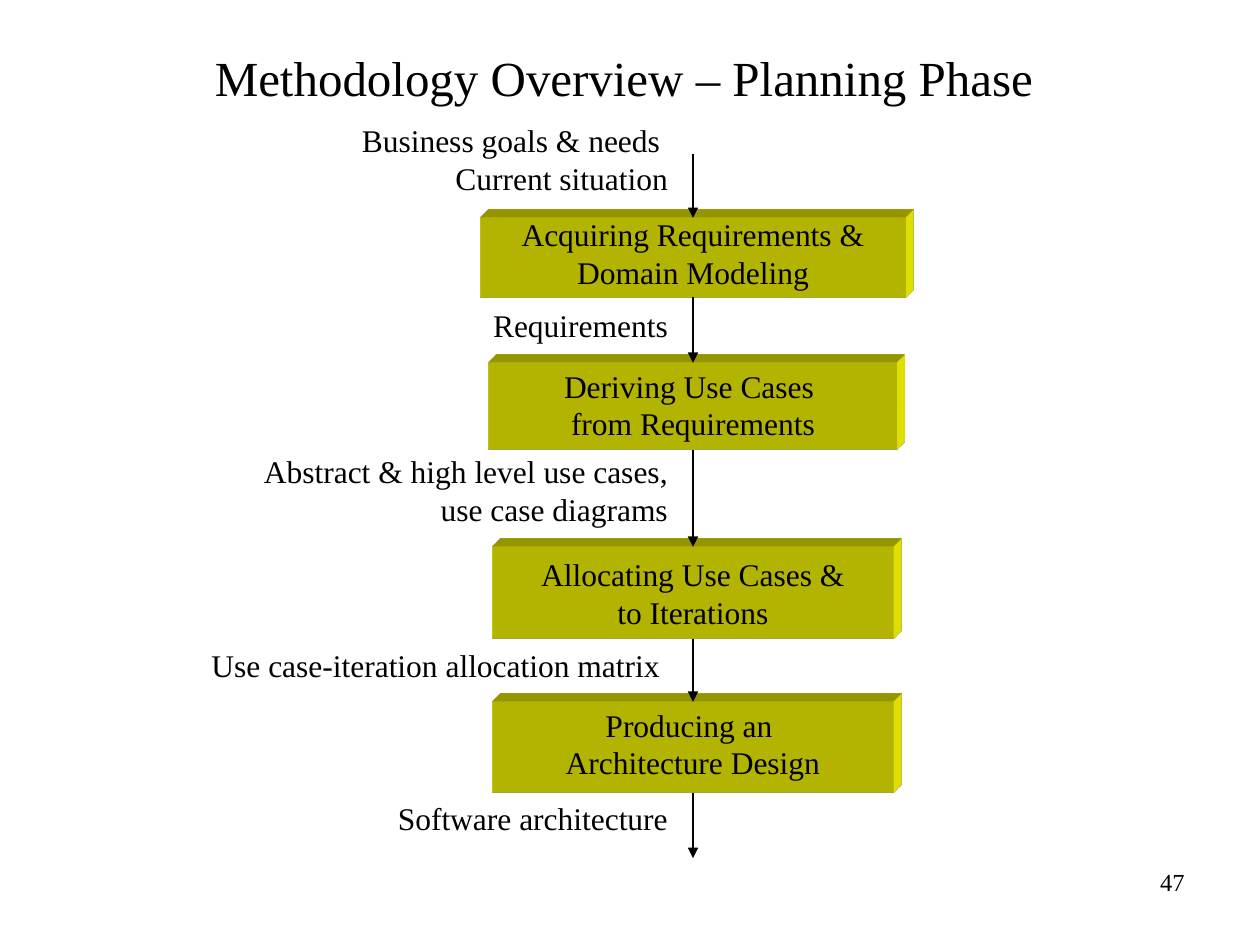
from lxml import etree
from pptx import Presentation
from pptx import util as u
from pptx.dml.color import RGBColor
from pptx.enum import shapes, text
from pptx.oxml import parse_xml
from pptx.oxml.ns import nsdecls, qn

BLACK = RGBColor(0, 0, 0)
YELLOW = RGBColor(0xFF, 0xFF, 0)
FONT = {"name": "Times New Roman"}
CENTER_X = 5.5
LABEL_RIGHT = 5.4
LEFT, RIGHT, CENTER = text.PP_ALIGN.LEFT, text.PP_ALIGN.RIGHT, text.PP_ALIGN.CENTER

SCENE = f"""<a:scene3d {nsdecls("a")}>
  <a:camera prst="legacyObliqueTopRight"/>
  <a:lightRig rig="legacyFlat3" dir="b"/>
</a:scene3d>"""
EXTRUSION = f"""<a:sp3d {nsdecls("a")} extrusionH="163500" prstMaterial="legacyMatrix">
  <a:bevelT w="13500" h="13500" prst="angle"/>
  <a:bevelB w="13500" h="13500" prst="angle"/>
  <a:extrusionClr><a:srgbClr val="{YELLOW}"/></a:extrusionClr>
</a:sp3d>"""

prs = Presentation()
prs.slide_width, prs.slide_height = u.Inches(10), u.Inches(7.5)
s = prs.slides.add_slide(prs.slide_layouts[6])


def add_text(lines, x, y, w, h, size=18, align=CENTER, anchor=text.MSO_ANCHOR.TOP):
    tf = s.shapes.add_textbox(*map(u.Inches, (x, y, w, h))).text_frame
    for key, value in {"word_wrap": True, "vertical_anchor": anchor}.items():
        setattr(tf, key, value)
    for i, line in enumerate(lines):
        p = tf.add_paragraph() if i else tf.paragraphs[0]
        p.alignment = align
        r = p.add_run()
        r.text = line
        for key, value in {**FONT, "size": u.Pt(size)}.items():
            setattr(r.font, key, value)
        r.font.color.rgb = BLACK


def add_arrow(y1, y2, above=None, below=None):
    sp = s.shapes.add_connector(
        shapes.MSO_CONNECTOR.STRAIGHT,
        *map(u.Inches, (CENTER_X, y1, CENTER_X, y2)),
    )
    if above is not None:
        sp.begin_connect(above, 2)
    if below is not None:
        sp.end_connect(below, 0)
    sp.line.color.rgb = BLACK
    sp.line.width = u.Pt(1.5)
    etree.SubElement(sp.line._get_or_add_ln(), qn("a:tailEnd"), type="triangle")
    etree.SubElement(sp._element.spPr, qn("a:effectLst"))


add_text(["47"], 7.17, 6.83, 2.33, 0.52, size=14, align=RIGHT)
add_text(["Methodology Overview – Planning Phase "], 0.5, 0.3, 9, 0.62,
         size=28, anchor=text.MSO_ANCHOR.MIDDLE)

steps = [
    (1.73, 3.37, 0.63, ["Acquiring Requirements & Domain Modeling"], 1.66, 3.19, 0.73),
    (2.88, 3.24, 0.69, ["Deriving Use Cases ", "from Requirements"], 2.86, 2.89, 0.78),
    (4.34, 3.19, 0.73, ["Allocating Use Cases &", "to Iterations"], 4.36, 3.08, 0.66),
    (5.57, 3.19, 0.72, ["Producing an ", "Architecture Design"], 5.55, 3.08, 0.72),
]
boxes = []
for y, w, h, lines, text_y, text_w, text_h in steps:
    sp = s.shapes.add_shape(
        shapes.MSO_SHAPE.RECTANGLE,
        *map(u.Inches, (CENTER_X - w / 2, y, w, h)),
    )
    sp.shadow.inherit = False
    sp.fill.solid()
    sp.fill.fore_color.rgb = YELLOW
    sp.line.fill.background()
    for xml in (SCENE, EXTRUSION):
        sp._element.spPr.append(parse_xml(xml))
    boxes.append(sp)
    add_text(lines, CENTER_X - text_w / 2, text_y, text_w, text_h)

labels = [
    (["Business goals & needs ", "Current situation"], 0.91, 3.29, 0.73),
    (["Requirements"], 2.38, 2.24, 0.45),
    (["Abstract & high level use cases, use case diagrams"], 3.54, 3.67, 0.73),
    (["Use case-iteration allocation matrix "], 5.08, 4.09, 0.46),
    (["Software architecture"], 6.29, 2.56, 0.51),
]
for lines, y, w, h in labels:
    add_text(lines, LABEL_RIGHT - w, y, w, h, align=RIGHT)

arrow_ends = [(1.22, 1.71), (2.36, 2.88), (3.56, 4.36), (5.07, 5.57), (6.28, 6.81)]
for (y1, y2), above, below in zip(arrow_ends, [None, *boxes], [*boxes, None]):
    add_arrow(y1, y2, above, below)

prs.save("out.pptx")
